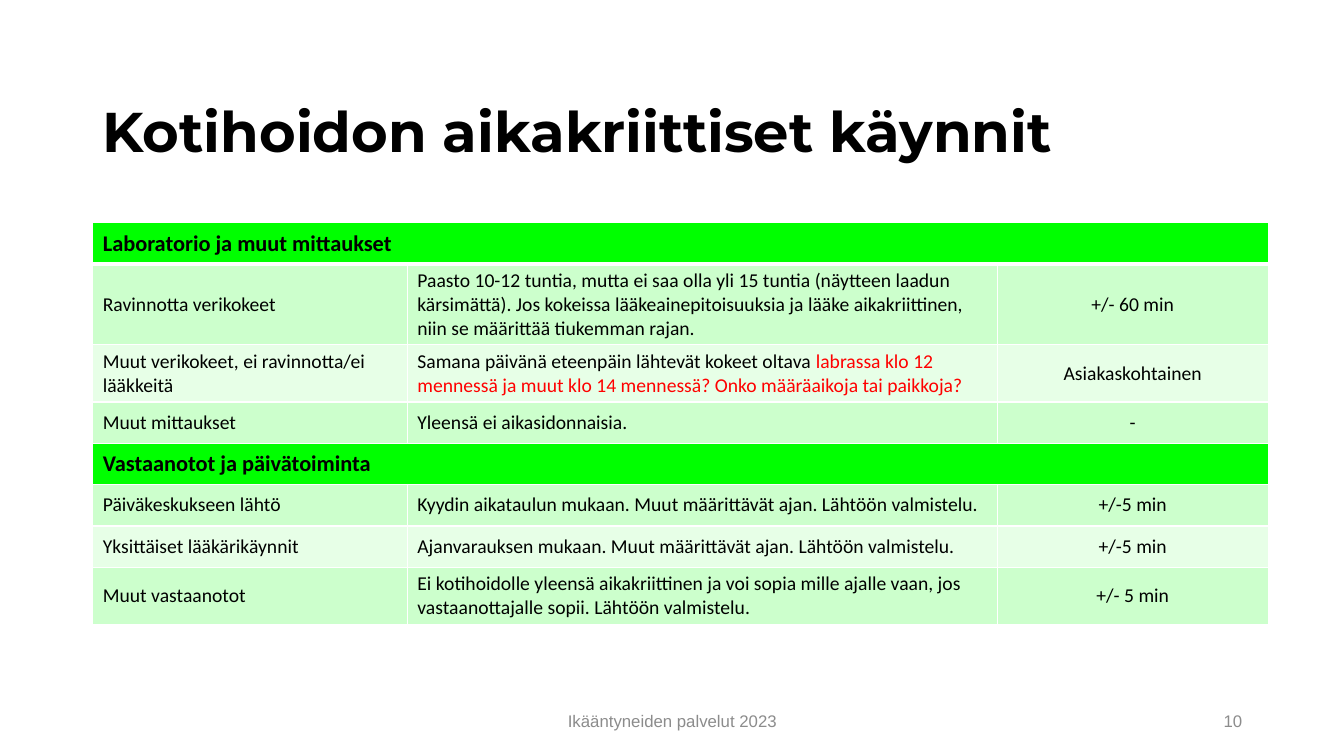
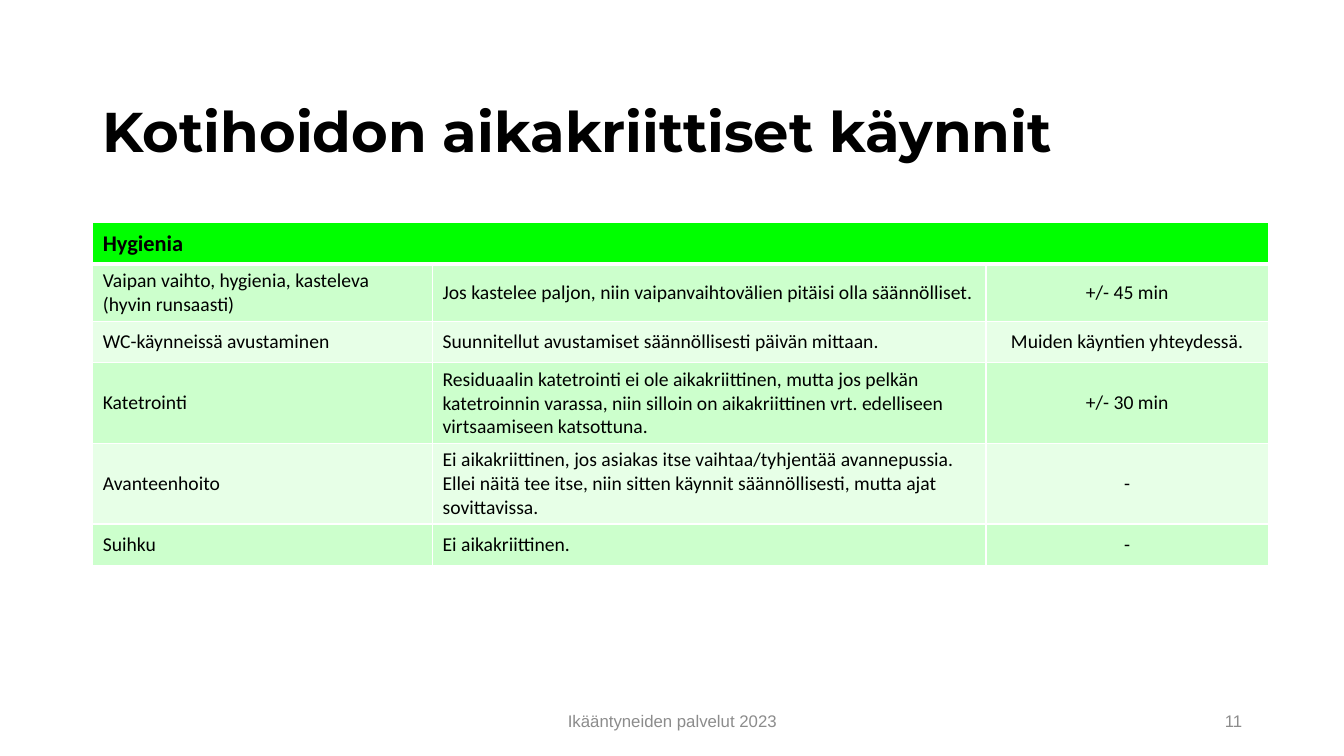
from lxml import etree
from pptx import Presentation
from pptx.dml.color import RGBColor
from pptx.enum.text import MSO_ANCHOR, PP_ALIGN
from pptx.oxml.ns import qn
from pptx.util import Inches, Pt

BLACK = RGBColor(0x00, 0x00, 0x00)
RED = RGBColor(0xFF, 0x00, 0x00)
GREY = RGBColor(0x8C, 0x8C, 0x8C)
WHITE = RGBColor(0xFF, 0xFF, 0xFF)
GREEN = RGBColor(0x00, 0xFF, 0x00)
LIGHT_GREEN = RGBColor(0xCC, 0xFF, 0xCC)
PALE_GREEN = RGBColor(0xE7, 0xFF, 0xE7)

LEFT = PP_ALIGN.LEFT
CENTER = PP_ALIGN.CENTER
RIGHT = PP_ALIGN.RIGHT
MIDDLE = MSO_ANCHOR.MIDDLE

TITLE = "Kotihoidon aikakriittiset käynnit"
FOOTER = "Ikääntyneiden palvelut 2023"

LABORATORY_AND_APPOINTMENTS = [
    ("Laboratorio ja muut mittaukset",),
    ("Ravinnotta verikokeet",
     "Paasto 10-12 tuntia, mutta ei saa olla yli 15 tuntia (näytteen laadun kärsimättä). "
     "Jos kokeissa lääkeainepitoisuuksia ja lääke aikakriittinen, niin se määrittää "
     "tiukemman rajan.",
     "+/- 60 min"),
    ("Muut verikokeet, ei ravinnotta/ei lääkkeitä",
     ("Samana päivänä eteenpäin lähtevät kokeet oltava ",
      "labrassa klo 12 mennessä ja muut klo 14 mennessä? Onko määräaikoja tai paikkoja?"),
     "Asiakaskohtainen"),
    ("Muut mittaukset", "Yleensä ei aikasidonnaisia.", "-"),
    ("Vastaanotot ja päivätoiminta",),
    ("Päiväkeskukseen lähtö",
     "Kyydin aikataulun mukaan. Muut määrittävät ajan. Lähtöön valmistelu.",
     "+/-5 min"),
    ("Yksittäiset lääkärikäynnit",
     "Ajanvarauksen mukaan. Muut määrittävät ajan. Lähtöön valmistelu.",
     "+/-5 min"),
    ("Muut vastaanotot",
     "Ei kotihoidolle yleensä aikakriittinen ja voi sopia mille ajalle vaan, jos "
     "vastaanottajalle sopii. Lähtöön valmistelu.",
     "+/- 5 min"),
]

HYGIENE = [
    ("Hygienia",),
    ("Vaipan vaihto, hygienia, kasteleva (hyvin runsaasti)",
     "Jos kastelee paljon, niin vaipanvaihtovälien pitäisi olla säännölliset.",
     "+/- 45 min"),
    ("WC-käynneissä avustaminen",
     "Suunnitellut avustamiset säännöllisesti päivän mittaan.",
     "Muiden käyntien yhteydessä."),
    ("Katetrointi",
     "Residuaalin katetrointi ei ole aikakriittinen, mutta jos pelkän katetroinnin "
     "varassa, niin silloin on aikakriittinen vrt. edelliseen virtsaamiseen katsottuna.",
     "+/- 30 min"),
    ("Avanteenhoito",
     "Ei aikakriittinen, jos asiakas itse vaihtaa/tyhjentää avannepussia. Ellei näitä "
     "tee itse, niin sitten käynnit säännöllisesti, mutta ajat sovittavissa.",
     "-"),
    ("Suihku", "Ei aikakriittinen.", "-"),
]


class VisitDeck:
    """Builds titled slides with a green visit table and a footer."""

    ROW_HEIGHT = 0.41
    COLUMN_ALIGNMENTS = (LEFT, LEFT, CENTER)

    def __init__(self):
        self.presentation = Presentation()
        self.presentation.slide_width = Inches(13.33)
        self.presentation.slide_height = Inches(7.5)
        self.slide = None

    def add_slide(self, number):
        self.slide = self.presentation.slides.add_slide(self.presentation.slide_layouts[6])
        title = self.add_text(TITLE, (0.92, 0.61, 11.46, 1.45), LEFT, "Montserrat", 40, BLACK, True)
        title.line_spacing = 0.9
        self.add_text(FOOTER, (5.17, 6.95, 3, 0.4), CENTER, "Arial", 12, GREY)
        self.add_text(str(number), (9.42, 6.95, 3, 0.4), RIGHT, "Arial", 12, GREY)

    def add_text(self, text, place, alignment, font_name, size, color, bold=False):
        frame = self.slide.shapes.add_textbox(*map(Inches, place)).text_frame
        frame.word_wrap = True
        frame.vertical_anchor = MIDDLE
        paragraph = frame.paragraphs[0]
        self.add_runs(paragraph, (text,), alignment, font_name, size, (color,), bold)
        return paragraph

    def add_runs(self, paragraph, parts, alignment, font_name, size, colors, bold=False):
        paragraph.alignment = alignment
        for part, color in zip(parts, colors):
            run = paragraph.add_run()
            run.text = part
            run.font.name = font_name
            run.font.size = Pt(size)
            run.font.bold = bold
            run.font.color.rgb = color

    def add_visit_table(self, rows, widths):
        table = self.slide.shapes.add_table(
            len(rows), len(widths), Inches(0.92), Inches(2.21),
            Inches(sum(widths)), Inches(self.ROW_HEIGHT * len(rows))).table
        for column, width in zip(table.columns, widths):
            column.width = Inches(width)
        for index, (row, texts) in enumerate(zip(table.rows, rows)):
            row.height = Inches(self.ROW_HEIGHT)
            is_section = len(texts) == 1
            band = LIGHT_GREEN if index % 2 else PALE_GREEN
            for cell in row.cells:
                self.add_borders(cell, 3 if index == 0 else 1, 3 if index == 1 else 1)
                cell.fill.solid()
                cell.fill.fore_color.rgb = GREEN if is_section else band
            if is_section:
                table.cell(index, 0).merge(table.cell(index, len(widths) - 1))
            for cell, text, alignment in zip(row.cells, texts, self.COLUMN_ALIGNMENTS):
                cell.vertical_anchor = MIDDLE
                parts = (text,) if isinstance(text, str) else text
                self.add_runs(cell.text_frame.paragraphs[0], parts, alignment, "Calibri",
                              16 if is_section else 14, (BLACK, RED), is_section)

    def add_borders(self, cell, bottom_width, top_width):
        properties = cell._tc.get_or_add_tcPr()
        for side, width in (("L", 1), ("R", 1), ("T", top_width), ("B", bottom_width)):
            border = etree.SubElement(properties, qn(f"a:ln{side}"), w=str(Pt(width)))
            fill = etree.SubElement(border, qn("a:solidFill"))
            etree.SubElement(fill, qn("a:srgbClr"), val=str(WHITE))


def main():
    deck = VisitDeck()
    deck.add_slide(10)
    deck.add_visit_table(LABORATORY_AND_APPOINTMENTS, (3.12, 5.85, 2.69))
    deck.add_slide(11)
    deck.add_visit_table(HYGIENE, (3.37, 5.49, 2.8))
    deck.presentation.save("out.pptx")


if __name__ == "__main__":
    main()
